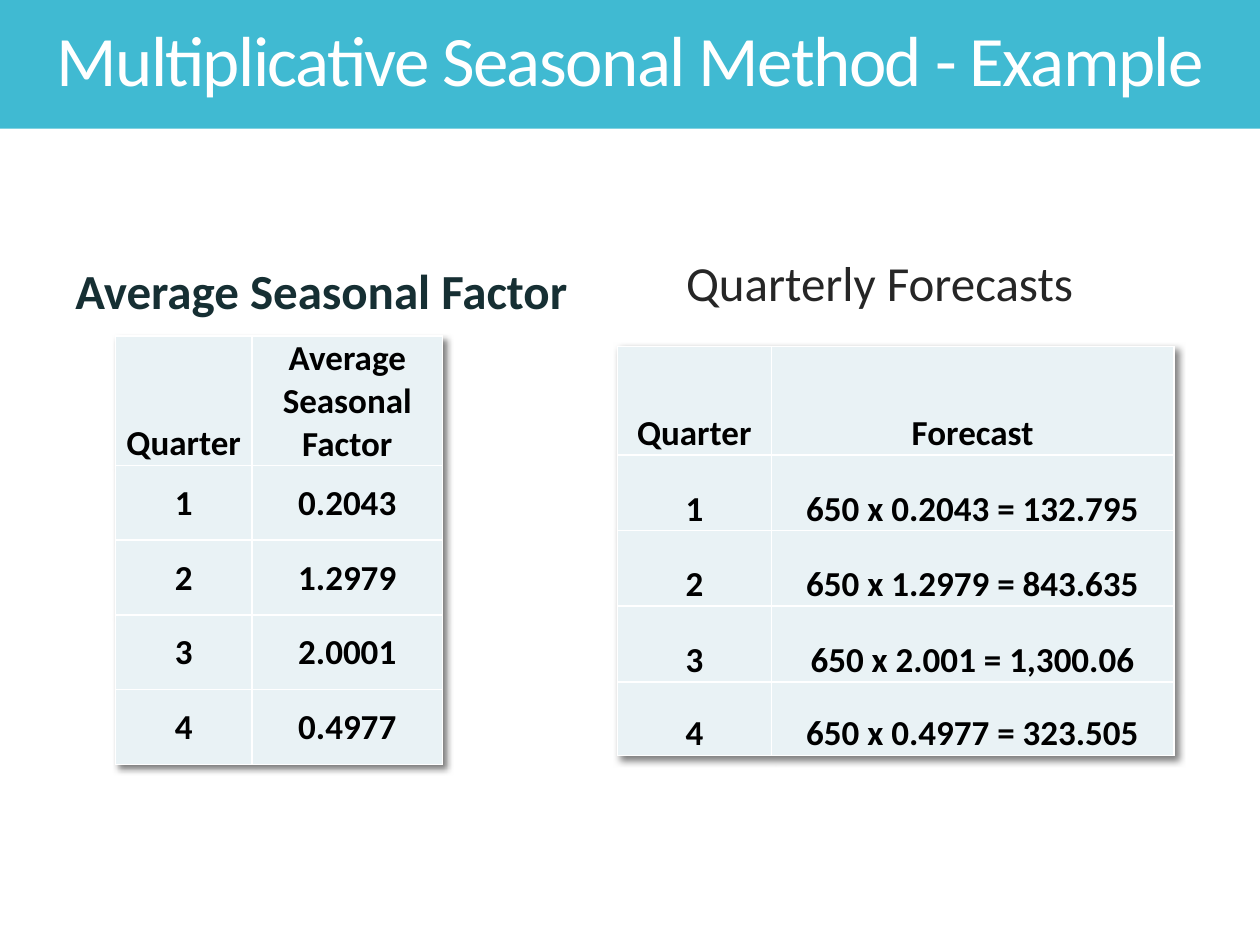
from pptx import Presentation
from pptx.util import Pt
from pptx.dml.color import RGBColor
from pptx.enum.shapes import MSO_SHAPE as Shape
from pptx.enum.text import PP_ALIGN as Align, MSO_ANCHOR as Anchor
from pptx.oxml import parse_xml
from pptx.oxml.ns import nsdecls

NS = nsdecls("a")
SHADOW = (f'<a:effectLst {NS}><a:outerShdw blurRad="50800" dist="38100" '
          'dir="2700000" algn="tl" rotWithShape="0"><a:srgbClr val="000000">'
          '<a:alpha val="50000"/></a:srgbClr></a:outerShdw></a:effectLst>')


def color(code):
    return RGBColor.from_string(code)


def write(frame, text, size=20, hue="000000", bold=False, align=Align.LEFT,
          line=None, before=None, track=None):
    par = frame.paragraphs[0]
    par.alignment = align
    if line:
        par.line_spacing = line
    if before:
        par.space_before = Pt(before)
    run = par.add_run()
    run.text = text
    font = run.font
    font.name, font.size, font.bold = "Calibri", Pt(size), bold
    font.color.rgb = color(hue)
    if track:
        run._r.get_or_add_rPr().set("spc", str(track))


def label(slide, left, top, text, **form):
    box = slide.shapes.add_textbox(Pt(left), Pt(top), Pt(299), Pt(42))
    box.text_frame.word_wrap = True
    write(box.text_frame, text, size=28, **form)


def banner(slide, text):
    bar = slide.shapes.add_shape(Shape.RECTANGLE, Pt(-0.7), 0, Pt(721.4), Pt(73.5))
    bar.shadow.inherit = False
    bar.fill.solid()
    bar.fill.fore_color.rgb = color("40BAD2")
    bar.line.fill.background()
    frame = bar.text_frame
    frame.word_wrap = True
    frame.vertical_anchor = Anchor.MIDDLE
    write(frame, text, size=40.5, hue="FFFFFF", align=Align.CENTER,
          line=0.85, track=-90)


def style(cell, text, anchor):
    cell.fill.solid()
    cell.fill.fore_color.rgb = color("E9F2F5")
    cell.margin_left = cell.margin_right = cell.margin_top = Pt(0.7)
    cell.margin_bottom = 0
    cell.vertical_anchor = anchor
    write(cell.text_frame, text, bold=True, align=Align.CENTER)
    # Borders come before the fill in the cell properties
    for i, side in enumerate(("lnL", "lnR", "lnT", "lnB")):
        cell._tc.get_or_add_tcPr().insert(i, parse_xml(
            f'<a:{side} {NS} w="12700"><a:solidFill><a:srgbClr val="FFFFFF"/>'
            f'</a:solidFill></a:{side}>'))


def grid(slide, left, top, cols, rows, data, anchor):
    table = slide.shapes.add_table(len(rows), len(cols), Pt(left), Pt(top),
                                   Pt(sum(cols)), Pt(sum(rows))).table
    table.first_row = table.horz_banding = False
    table._tbl.tblPr.insert(0, parse_xml(SHADOW))
    for col, width in zip(table.columns, cols):
        col.width = Pt(width)
    for r, (height, line) in enumerate(zip(rows, data)):
        table.rows[r].height = Pt(height)
        for c, text in enumerate(line):
            style(table.cell(r, c), text, anchor if r else Anchor.BOTTOM)


def main():
    deck = Presentation()
    deck.slide_width, deck.slide_height = Pt(720), Pt(540)
    slide = deck.slides.add_slide(deck.slide_layouts[6])

    # Forecasts on the right
    label(slide, 385, 146, "Quarterly Forecasts", hue="262626",
          line=0.85, before=9.8)
    sums = ["650 x 0.2043 = 132.795", "650 x 1.2979 = 843.635",
            "650 x 2.001 = 1,300.06", "650 x 0.4977 = 323.505"]
    grid(slide, 352.8, 198, [88, 230], [62, 43.2, 43.2, 43.2, 42],
         [("Quarter", "Forecast")] + [(str(q), s) for q, s in enumerate(sums, 1)],
         Anchor.BOTTOM)

    # Seasonal factors on the left
    label(slide, 36, 145.5, "Average Seasonal Factor", hue="162F33",
          bold=True, before=5.6)
    means = ["0.2043", "1.2979", "2.0001", "0.4977"]
    grid(slide, 66, 192, [78, 109], [74] + [42.7] * 4,
         [("Quarter", "Average Seasonal Factor")]
         + [(str(q), m) for q, m in enumerate(means, 1)],
         Anchor.MIDDLE)

    # Title bar
    banner(slide, "Multiplicative Seasonal Method - Example")
    deck.save("out.pptx")


if __name__ == "__main__":
    main()
